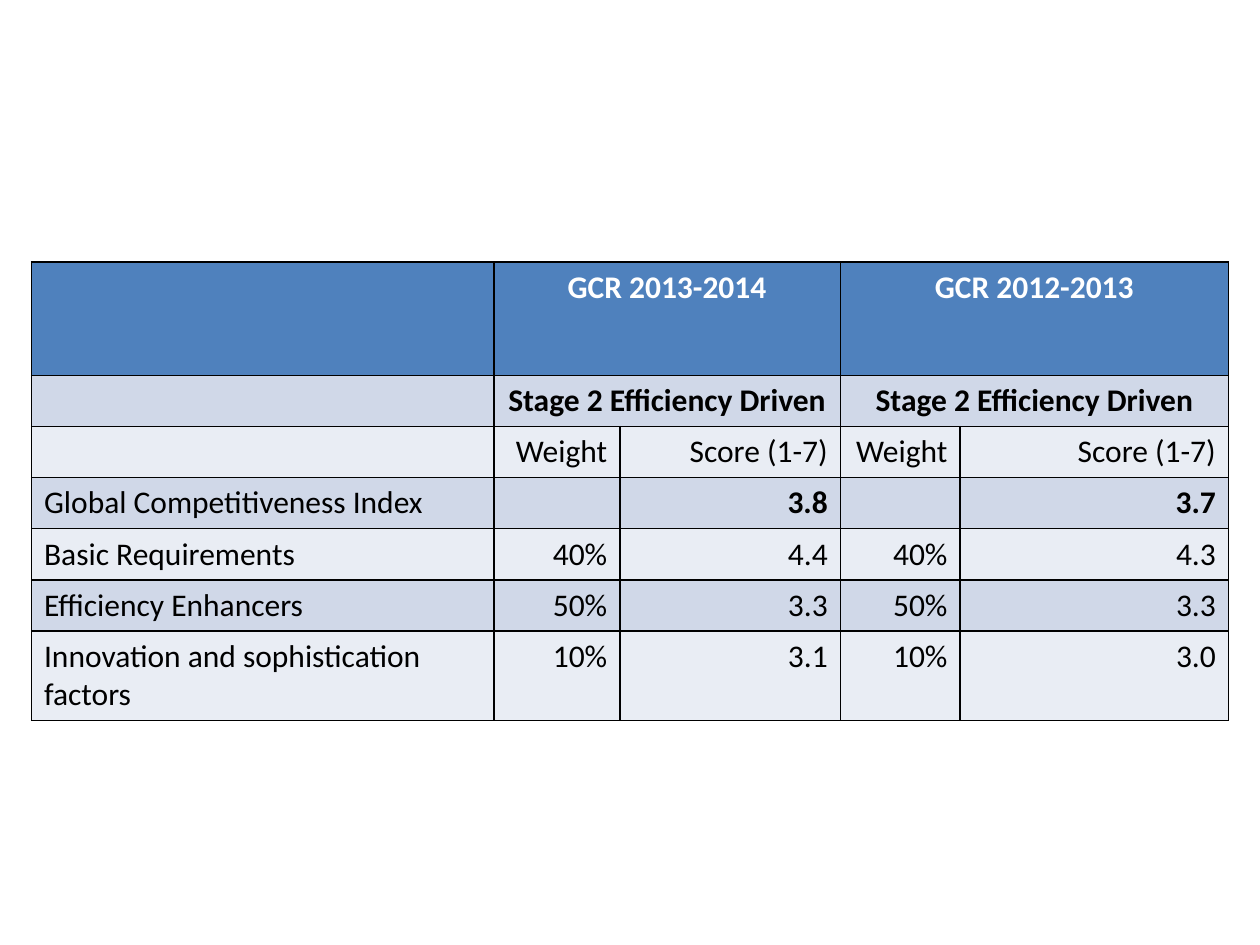
"""Build a slide with a table comparing two years of competitiveness scores."""
from lxml.etree import SubElement
from pptx import Presentation
from pptx.dml.color import RGBColor
from pptx.enum.text import PP_ALIGN as Align
from pptx.oxml.ns import qn
from pptx.util import Inches, Pt

ROWS = [
    ("", "GCR 2013-2014", "", "GCR 2012-2013", ""),
    ("", "Stage 2 Efficiency Driven", "", "Stage 2 Efficiency Driven", ""),
    ("", "Weight", "Score (1-7)", "Weight", "Score (1-7)"),
    ("Global Competitiveness Index", "", "3.8", "", "3.7"),
    ("Basic Requirements", "40%", "4.4", "40%", "4.3"),
    ("Efficiency Enhancers", "50%", "3.3", "50%", "3.3"),
    ("Innovation and sophistication factors", "10%", "3.1", "10%", "3.0"),
]
COLUMN_WIDTHS = [3.67, 1, 1.75, 0.95, 2.13]
ROW_HEIGHTS = [0.9] + [0.4] * 5 + [0.71]
HEADER_FILL = "4F81BD"
BAND_FILLS = ["E9EDF4", "D0D8E8"]
MERGED_ROWS = (0, 1)
BOLD_ROWS = (0, 1, 3)
PAIR_STARTS = (1, 3)


def color(value):
    return RGBColor.from_string(value)


def write(cell, text, bold=False, font_color="000000", align=Align.LEFT, size=18):
    paragraph = cell.text_frame.paragraphs[0]
    paragraph.alignment = align
    paragraph.font.size = Pt(size)
    if not text:
        return
    run = paragraph.add_run()
    run.text = text
    run.font.name = "Calibri"
    run.font.size = Pt(size)
    run.font.bold = bold
    run.font.color.rgb = color(font_color)


def style_cell(cell, fill, line_color="000000", line_width=1):
    properties = cell._tc.get_or_add_tcPr()
    for side in ("a:lnL", "a:lnR", "a:lnT", "a:lnB"):
        line = SubElement(properties, qn(side), w=str(Pt(line_width)))
        solid = SubElement(line, qn("a:solidFill"))
        SubElement(solid, qn("a:srgbClr"), val=line_color)
    cell.fill.solid()
    cell.fill.fore_color.rgb = color(fill)


def add_score_table(slide):
    frame = slide.shapes.add_table(
        len(ROWS), len(COLUMN_WIDTHS), Inches(0.25), Inches(2.08),
        Inches(sum(COLUMN_WIDTHS)), Inches(sum(ROW_HEIGHTS)))
    table = frame.table
    for column, width in zip(table.columns, COLUMN_WIDTHS):
        column.width = Inches(width)
    for row, height in zip(table.rows, ROW_HEIGHTS):
        row.height = Inches(height)
    for r, texts in enumerate(ROWS):
        for c, text in enumerate(texts):
            cell = table.cell(r, c)
            style_cell(cell, BAND_FILLS[r % 2] if r else HEADER_FILL)
            value_align = Align.CENTER if r in MERGED_ROWS else Align.RIGHT
            write(cell, text,
                  bold=r in BOLD_ROWS and c > 0,
                  font_color="000000" if r else "FFFFFF",
                  align=value_align if c else Align.LEFT)
    for r in MERGED_ROWS:
        for c in PAIR_STARTS:
            table.cell(r, c).merge(table.cell(r, c + 1))


def main():
    presentation = Presentation()
    presentation.slide_width = Inches(10)
    presentation.slide_height = Inches(7.5)
    slide = presentation.slides.add_slide(presentation.slide_layouts[6])
    add_score_table(slide)
    presentation.save("out.pptx")


if __name__ == "__main__":
    main()
